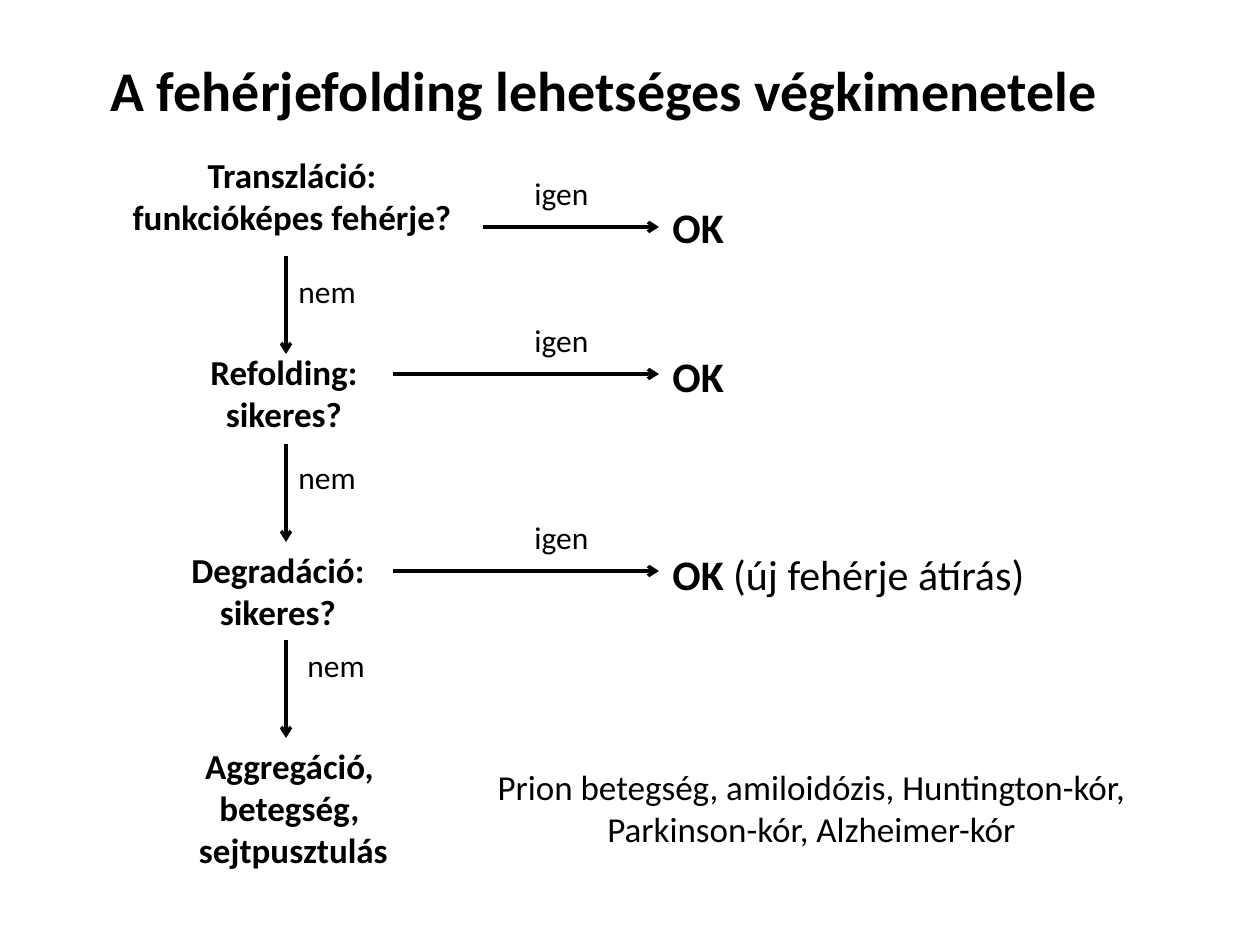
from lxml import etree
from pptx import Presentation, util as u
from pptx.dml.color import RGBColor
from pptx.enum import shapes, text
from pptx.oxml.ns import qn

PX = 914400 // 126
BLACK = "000000"
ARROW_END = 659
DOWN_X, DOWN_LENGTH = 286, 98
LINE_HEIGHT = 97

STAGES = [
    ((118, 147, 348, LINE_HEIGHT), ["Transzláció:", "funkcióképes fehérje?"]),
    ((197, 344, 174, LINE_HEIGHT), ["Refolding:", "sikeres?"]),
    ((178, 542, 200, LINE_HEIGHT), ["Degradáció:", "sikeres?"]),
    ((186, 738, 215, 140), ["Aggregáció, ", "betegség, ", "sejtpusztulás"]),
]
YES_BRANCHES = [
    (483, 227, 195, 77, ""),
    (393, 374, 344, 77, ""),
    (393, 571, 542, 389, "(új fehérje átírás)"),
]
NO_BRANCHES = [(256, 286, 266), (444, 286, 452), (640, 295, 640)]


def color(value):
    """Return the colour for a hex string."""
    return RGBColor.from_string(value)


def px(*lengths):
    """Turn whole pixels into EMU."""
    return [u.Emu(length * PX) for length in lengths]


def add_text(slide, box, lines, size, centered=False):
    """Add an unwrapped text box; each line is a list of (wording, bold) runs."""
    frame = slide.shapes.add_textbox(*px(*box)).text_frame
    frame.word_wrap = False
    frame.auto_size = text.MSO_AUTO_SIZE.SHAPE_TO_FIT_TEXT
    for index, runs in enumerate(lines):
        paragraph = frame.add_paragraph() if index else frame.paragraphs[0]
        paragraph.alignment = text.PP_ALIGN.CENTER if centered else text.PP_ALIGN.LEFT
        for wording, bold in runs:
            run = paragraph.add_run()
            run.text = wording
            run.font.name = "Calibri"
            run.font.size = u.Pt(size)
            run.font.bold = bold
            run.font.color.rgb = color(BLACK)


def add_arrow(slide, start, end):
    """Add a straight black arrow from start to end."""
    connector = slide.shapes.add_connector(
        shapes.MSO_CONNECTOR.STRAIGHT, *px(*start, *end))
    connector.line.color.rgb = color(BLACK)
    connector.line.width = u.Pt(2)
    etree.SubElement(connector.line._get_or_add_ln(), qn("a:tailEnd"), type="arrow")
    etree.SubElement(connector._element.spPr, qn("a:effectLst"))


def add_yes_branch(slide, start_x, arrow_y, result_top, result_width, remark):
    """Add the arrow to the right with its label and outcome."""
    add_arrow(slide, (start_x, arrow_y), (ARROW_END, arrow_y))
    add_text(slide, (522, arrow_y - 59, 81, 50), [[("igen", False)]], 18)
    runs = [("OK ", True), (remark, False)] if remark else [("OK", True)]
    add_text(slide, (660, result_top, result_width, 63), [runs], 24)


def add_no_branch(slide, top, label_left, label_top):
    """Add the arrow down to the next stage with its label."""
    add_arrow(slide, (DOWN_X, top), (DOWN_X, top + DOWN_LENGTH))
    add_text(slide, (label_left, label_top, 83, 50), [[("nem", False)]], 18)


def main():
    """Build the slide and save it."""
    presentation = Presentation()
    presentation.slide_width, presentation.slide_height = px(1260, 945)
    slide = presentation.slides.add_slide(presentation.slide_layouts[6])
    add_text(slide, (98, 49, 1034, 81),
             [[("A fehérjefolding lehetséges végkimenetele", True)]], 32)
    for box, lines in STAGES:
        add_text(slide, box, [[(line, True)] for line in lines], 20, centered=True)
    for branch in YES_BRANCHES:
        add_yes_branch(slide, *branch)
    for branch in NO_BRANCHES:
        add_no_branch(slide, *branch)
    diseases = ["Prion betegség, amiloidózis, Huntington-kór,",
                "Parkinson-kór, Alzheimer-kór"]
    add_text(slide, (482, 759, 659, LINE_HEIGHT),
             [[(line, False)] for line in diseases], 20, centered=True)
    presentation.save("out.pptx")


if __name__ == "__main__":
    main()
